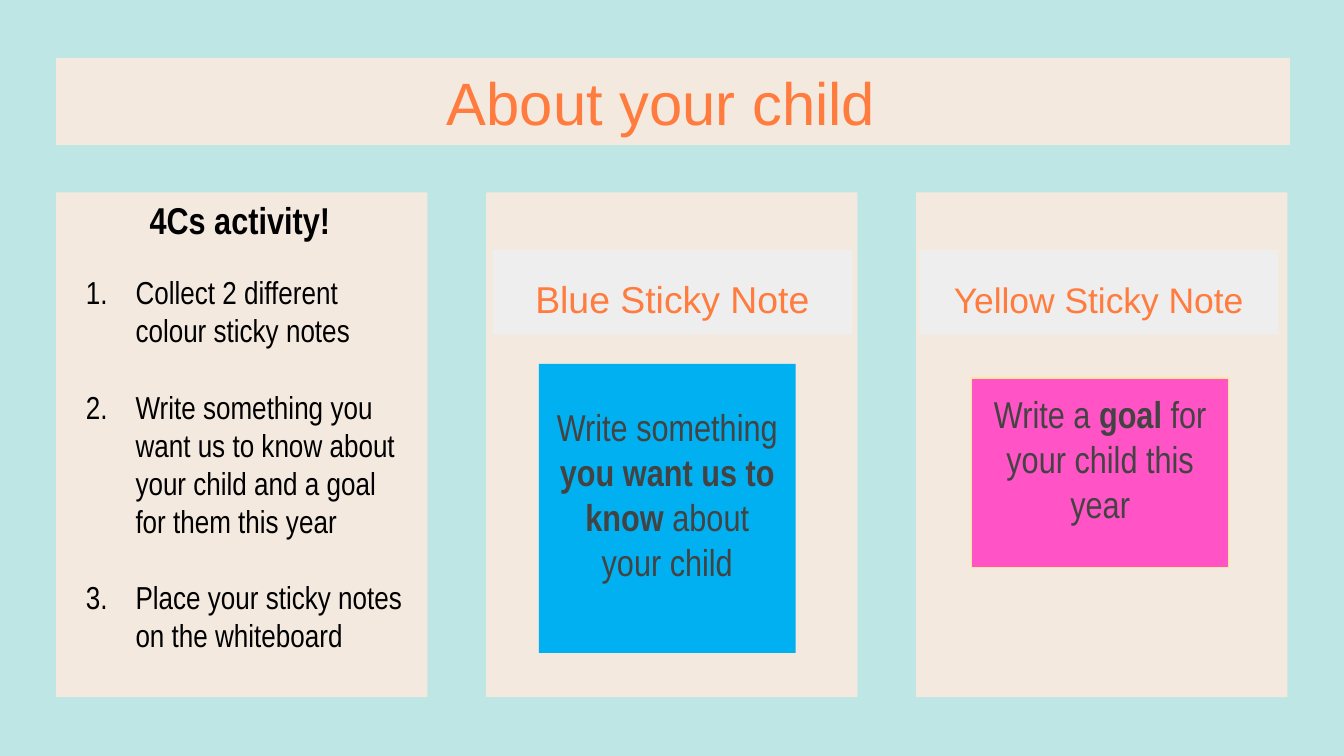
from dataclasses import dataclass

from lxml import etree
from pptx import Presentation
from pptx import util as u
from pptx.dml.color import RGBColor
from pptx.enum import shapes, text
from pptx.oxml import ns


@dataclass(frozen=True)
class Theme:
    background: str = "BEE6E4"
    panel: str = "F4E9DF"
    label: str = "EEEEEE"
    accent: str = "FF7C3E"
    ink: str = "434343"
    black: str = "000000"
    blue: str = "00B0F0"
    pink: str = "FF53C6"
    pink_edge: str = "FFE599"
    wide_font: str = "Arial"
    narrow_font: str = "Arial Narrow"
    title_size: float = 32
    note_size: float = 20
    small_label_size: float = 19
    list_size: float = 17
    inset: float = 7.2


def color(value):
    return RGBColor.from_string(value)


def write(paragraph, runs, *, font, size, ink, align=text.PP_ALIGN.CENTER, before=0):
    paragraph.alignment = align
    paragraph.space_before = u.Pt(before)
    for words, bold in runs:
        run = paragraph.add_run()
        run.text = words
        run.font.name = font
        run.font.size = u.Pt(size)
        run.font.bold = bold
        run.font.color.rgb = color(ink)


class Builder:
    def __init__(self, slide, theme):
        self.slide = slide
        self.theme = theme
        slide.background.fill.solid()
        slide.background.fill.fore_color.rgb = color(theme.background)

    def frame(self, shape, anchor, top_inset=None):
        frame = shape.text_frame
        frame.word_wrap = True
        frame.auto_size = text.MSO_AUTO_SIZE.NONE
        frame.vertical_anchor = anchor
        inset = u.Pt(self.theme.inset)
        frame.margin_left = frame.margin_right = frame.margin_bottom = inset
        frame.margin_top = inset if top_inset is None else u.Pt(top_inset)
        return frame

    def rectangle(self, box, fill, edge=None):
        shape = self.slide.shapes.add_shape(
            shapes.MSO_SHAPE.RECTANGLE, *map(u.Pt, box))
        shape.shadow.inherit = False
        shape.fill.solid()
        shape.fill.fore_color.rgb = color(fill)
        if edge:
            shape.line.color.rgb = color(edge)
            shape.line.width = u.Pt(0.75)
        else:
            shape.line.fill.background()
        return shape

    def text_box(self, box, anchor):
        shape = self.slide.shapes.add_textbox(*map(u.Pt, box))
        return self.frame(shape, anchor)

    def title(self, box, words):
        frame = self.text_box(box, text.MSO_ANCHOR.MIDDLE)
        write(frame.paragraphs[0], [(words, False)], font=self.theme.wide_font,
              size=self.theme.title_size, ink=self.theme.accent)

    def label(self, box, words, size):
        shape = self.rectangle(box, self.theme.label)
        frame = self.frame(shape, text.MSO_ANCHOR.BOTTOM)
        write(frame.paragraphs[0], [(words, False)], font=self.theme.wide_font,
              size=size, ink=self.theme.accent)

    def note(self, box, runs, fill, edge=None, top_inset=None):
        shape = self.rectangle(box, fill, edge)
        frame = self.frame(shape, text.MSO_ANCHOR.TOP, top_inset)
        write(frame.paragraphs[0], runs, font=self.theme.narrow_font,
              size=self.theme.note_size, ink=self.theme.ink)

    def number(self, paragraph):
        properties = paragraph._p.get_or_add_pPr()
        properties.set("marL", str(u.Pt(36)))
        properties.set("indent", str(u.Pt(-26.6)))
        bullet_color = etree.SubElement(properties, ns.qn("a:buClr"))
        etree.SubElement(bullet_color, ns.qn("a:srgbClr"), val=self.theme.black)
        etree.SubElement(properties, ns.qn("a:buFont"), typeface=self.theme.narrow_font)
        etree.SubElement(properties, ns.qn("a:buAutoNum"), type="arabicPeriod")

    def activity(self, box, heading, steps):
        frame = self.text_box(box, text.MSO_ANCHOR.TOP)
        style = dict(font=self.theme.narrow_font, ink=self.theme.black)
        write(frame.paragraphs[0], [(heading, True)], size=self.theme.note_size, **style)
        for index, step in enumerate(steps):
            paragraph = frame.add_paragraph()
            self.number(paragraph)
            write(paragraph, [(step, False)], size=self.theme.list_size,
                  align=text.PP_ALIGN.LEFT, before=20.4 if index else 16.5, **style)


def main():
    presentation = Presentation()
    presentation.slide_width = u.Pt(720)
    presentation.slide_height = u.Pt(405)
    theme = Theme()
    builder = Builder(presentation.slides.add_slide(presentation.slide_layouts[6]), theme)

    builder.rectangle((30, 31, 661, 46.8), theme.panel)
    for column in range(3):
        builder.rectangle((30 + 230.4 * column, 103, 199, 270.5), theme.panel)

    builder.title((41.8, 31, 625, 46.8), "About your child")
    builder.note((288.7, 195, 137.5, 154.8),
                 [("Write something ", False), ("you want us to know", True),
                  (" about your child", False)], theme.blue, top_inset=21.6)
    builder.label((264.2, 134, 192.2, 45.2), "Blue Sticky Note", theme.note_size)
    builder.note((520.6, 202.5, 137.5, 101.5),
                 [("Write a ", False), ("goal", True),
                  (" for your child this year", False)], theme.pink, theme.pink_edge)
    builder.label((492.5, 134, 192.2, 45.2), "Yellow Sticky Note", theme.small_label_size)
    builder.activity((29.5, 98.6, 198, 282.2), "4Cs activity!", [
        "Collect 2 different colour sticky notes",
        "Write something you want us to know about your child and a goal for them this year",
        "Place your sticky notes on the whiteboard",
    ])
    presentation.save("out.pptx")


if __name__ == "__main__":
    main()
